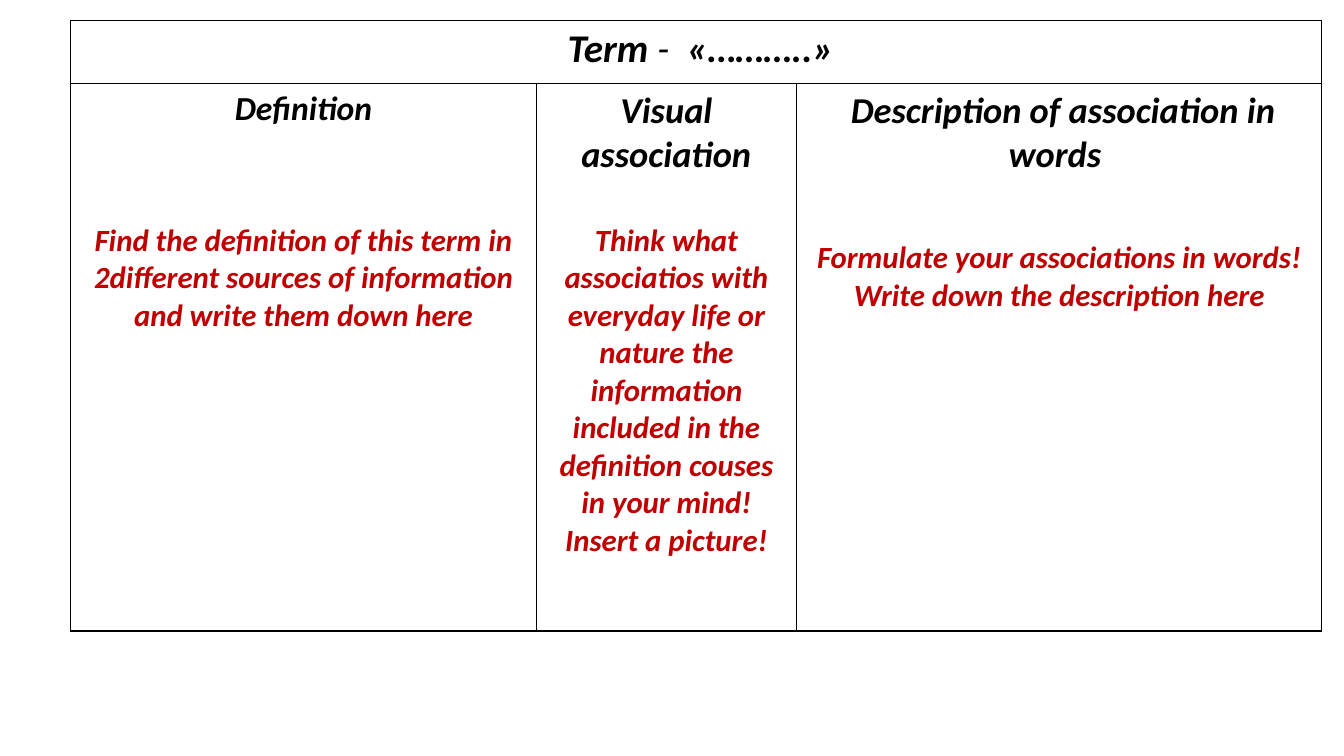
from lxml.etree import SubElement
from pptx import Presentation
from pptx.dml.color import RGBColor
from pptx.enum.text import PP_ALIGN
from pptx.oxml.ns import qn
from pptx.util import Inches, Pt

BLACK = RGBColor(0x00, 0x00, 0x00)
RED = RGBColor(0xC0, 0x00, 0x00)

COLUMN_WIDTHS = [4.62, 2.58, 5.21]
ROW_HEIGHTS = [0.63, 5.43]

# Heading, heading size, gap in points, instruction
COLUMNS = [
    ("Definition", 24, 66,
     "Find the definition of this term in 2different sources of information "
     "and write them down here"),
    ("Visual association", 26, 31.7,
     "Think what associatios with everyday life or nature the information "
     "included in the definition couses in your mind!Insert a picture!"),
    (" Description of association in words ", 26, 44,
     "Formulate your associations in words!Write down the description here"),
]


def add_span(para, text, size=28, color=BLACK, bold=True):
    para.alignment = PP_ALIGN.CENTER
    span = para.add_run()
    span.text = text
    font = span.font
    font.name, font.size, font.bold, font.italic = "Calibri", Pt(size), bold, True
    font.color.rgb = color


def set_borders(cell):
    properties = cell._tc.get_or_add_tcPr()
    for index, side in enumerate(("a:lnL", "a:lnR", "a:lnT", "a:lnB")):
        line = properties.makeelement(qn(side), {"w": str(Pt(1))})
        fill = SubElement(line, qn("a:solidFill"))
        SubElement(fill, qn("a:srgbClr"), val=str(BLACK))
        properties.insert(index, line)


def add_term_table(page, left, top):
    frame = page.shapes.add_table(
        len(ROW_HEIGHTS), len(COLUMN_WIDTHS), Inches(left), Inches(top),
        Inches(sum(COLUMN_WIDTHS)), Inches(sum(ROW_HEIGHTS)))
    table = frame.table
    table.first_row = table.horz_banding = False
    for column, width in zip(table.columns, COLUMN_WIDTHS):
        column.width = Inches(width)
    for row, height in zip(table.rows, ROW_HEIGHTS):
        row.height = Inches(height)
    for cell in table.iter_cells():
        cell.fill.background()
        set_borders(cell)

    # Term across the top
    title = table.cell(0, 0)
    title.merge(table.cell(0, len(COLUMN_WIDTHS) - 1))
    para = title.text_frame.paragraphs[0]
    for text, bold in ((" ", False), ("Term", True), (" -  ", False), ("«………..»", True)):
        add_span(para, text, bold=bold)

    # Heading and instruction in each column
    for index, (heading, size, gap, instruction) in enumerate(COLUMNS):
        text_frame = table.cell(1, index).text_frame
        add_span(text_frame.paragraphs[0], heading, size=size)
        para = text_frame.add_paragraph()
        para.space_before = Pt(gap)
        add_span(para, instruction, size=22, color=RED)


def main():
    deck = Presentation()
    deck.slide_width, deck.slide_height = Inches(13.33), Inches(7.5)
    page = deck.slides.add_slide(deck.slide_layouts[6])
    add_term_table(page, left=0.7, top=0.2)
    deck.save("out.pptx")


if __name__ == "__main__":
    main()
